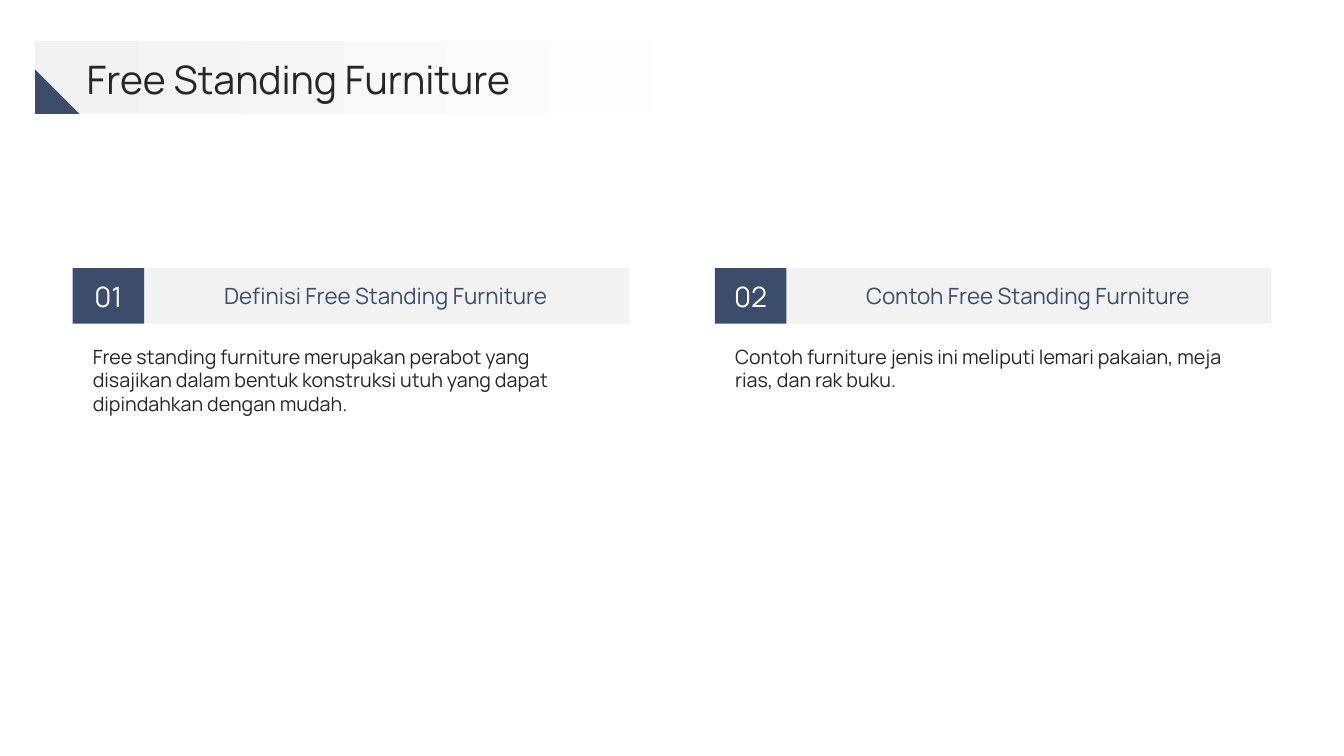
import pptx
import pptx.util
import pptx.dml.color
import pptx.enum.shapes
import pptx.enum.text
from dataclasses import dataclass

PX = 9144
SHAPE = pptx.enum.shapes.MSO_SHAPE
ALIGN = pptx.enum.text.PP_ALIGN
ANCHOR = pptx.enum.text.MSO_ANCHOR


@dataclass(frozen=True)
class Theme:
    font: str = "Manrope"
    navy: str = "3C4C6B"
    grey: str = "F2F2F2"
    white: str = "FFFFFF"
    ink: str = "262626"
    title_size: int = 28
    number_size: int = 20
    heading_size: int = 16
    body_size: int = 14


theme = Theme()
rgb = pptx.dml.color.RGBColor.from_string

deck = pptx.Presentation()
deck.slide_width = 1333 * PX
deck.slide_height = 750 * PX
slide = deck.slides.add_slide(deck.slide_layouts[6])


def add_block(kind, left, top, width, height, color):
    block = slide.shapes.add_shape(kind, left * PX, top * PX, width * PX, height * PX)
    block.shadow.inherit = False
    block.fill.solid()
    block.fill.fore_color.rgb = rgb(color)
    block.line.fill.background()
    return block


def add_label(text, left, top, width, height, size, color,
              align=ALIGN.LEFT, anchor=ANCHOR.MIDDLE):
    label = slide.shapes.add_textbox(left * PX, top * PX, width * PX, height * PX)
    frame = label.text_frame
    frame.word_wrap = True
    frame.margin_left = frame.margin_top = frame.margin_right = frame.margin_bottom = 0
    frame.vertical_anchor = anchor
    frame.text = text
    paragraph = frame.paragraphs[0]
    paragraph.alignment = align
    font = paragraph.runs[0].font
    font.name = theme.font
    font.size = pptx.util.Pt(size)
    font.color.rgb = rgb(color)


sections = [
    ("01", "Definisi Free Standing Furniture",
     "Free standing furniture merupakan perabot yang disajikan dalam bentuk "
     "konstruksi utuh yang dapat dipindahkan dengan mudah."),
    ("02", "Contoh Free Standing Furniture",
     "Contoh furniture jenis ini meliputi lemari pakaian, meja rias, dan rak buku."),
]
first_column, column_step = 72, 637

for index, (number, heading, body) in enumerate(sections):
    left = first_column + index * column_step
    add_block(SHAPE.RECTANGLE, left + 70, 266, 482, 55, theme.grey)
    add_block(SHAPE.RECTANGLE, left, 266, 71, 55, theme.navy)
    add_label(body, left + 20, 342, 512, 187, theme.body_size, theme.ink,
              anchor=ANCHOR.TOP)
    add_label(heading, left + 94, 274, 433, 39, theme.heading_size, theme.navy,
              ALIGN.CENTER)
    add_label(number, left + 6, 278, 59, 31, theme.number_size, theme.white,
              ALIGN.CENTER)

title_band = add_block(SHAPE.ROUNDED_RECTANGLE, 35, 41, 894, 72, theme.grey)
title_band.adjustments[0] = 0
title_band.fill.gradient()
title_band.fill.gradient_angle = 0
fade = [(0, theme.grey), (0.8, theme.white)]
for stop, (position, color) in zip(title_band.fill.gradient_stops, fade):
    stop.position = position
    stop.color.rgb = rgb(color)

add_label("Free Standing Furniture", 86, 53, 1167, 51, theme.title_size, theme.ink)
add_block(SHAPE.RIGHT_TRIANGLE, 35, 69, 44, 44, theme.navy)

deck.save("out.pptx")
